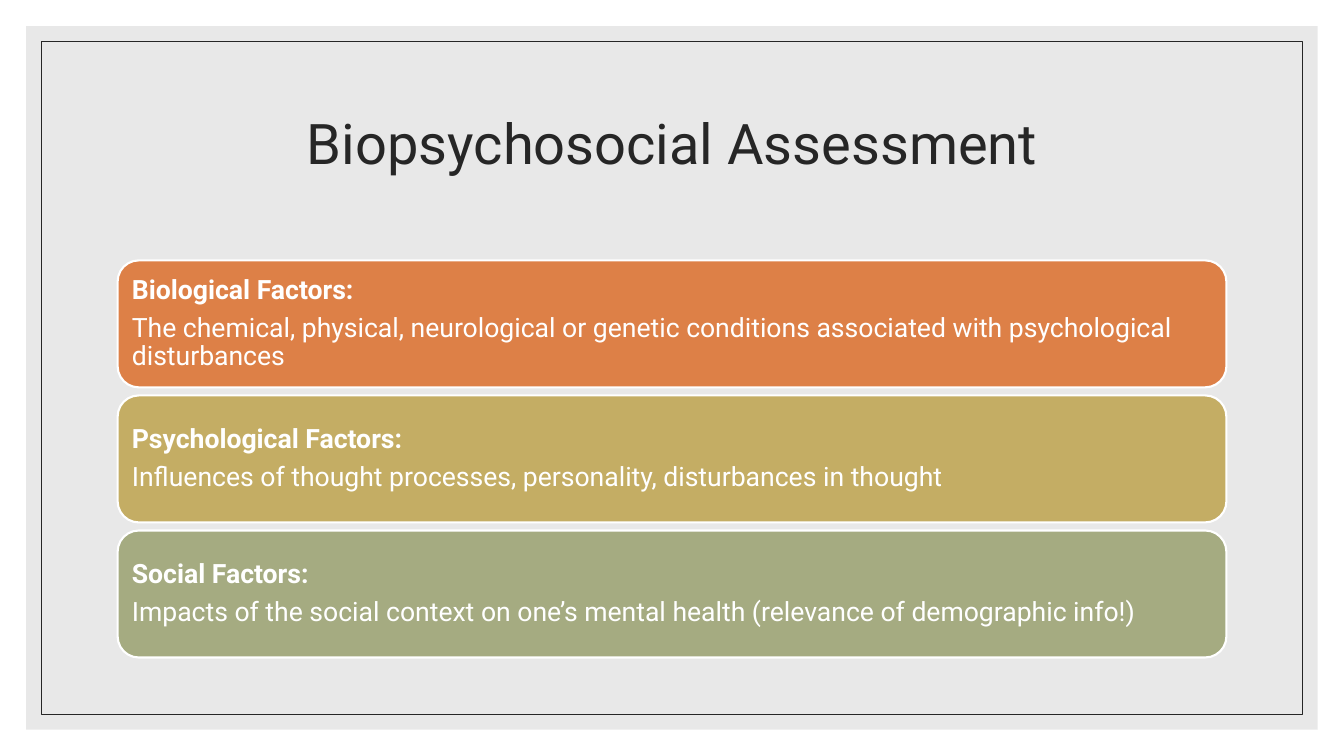
from dataclasses import dataclass

import lxml.etree
import pptx
import pptx.dml.color
import pptx.enum.shapes
import pptx.enum.text
import pptx.oxml.ns
import pptx.shapes.autoshape
import pptx.slide
import pptx.text.text
import pptx.util

COLUMNS, ROWS = 80, 45
SLIDE_WIDTH, SLIDE_HEIGHT = pptx.util.Inches(13.33), pptx.util.Inches(7.5)
FONT = "Roboto"
COLORS = {
    "white": "FFFFFF",
    "panel": "D9D9D9",
    "ink": "262626",
    "biological": "DD8047",
    "psychological": "C4AD64",
    "social": "A5AB81",
}


@dataclass
class Area:
    """A place on the slide grid, in columns and rows."""
    column: float
    row: float
    columns: float
    rows: float

    def lengths(self) -> tuple[int, int, int, int]:
        across, down = SLIDE_WIDTH / COLUMNS, SLIDE_HEIGHT / ROWS
        return (round(self.column * across), round(self.row * down),
                round(self.columns * across), round(self.rows * down))


@dataclass
class Factor:
    color: str
    heading: str
    description: str


FACTORS = [
    Factor("biological", "Biological Factors:",
           "The chemical, physical, neurological or genetic conditions "
           "associated with psychological disturbances"),
    Factor("psychological", "Psychological Factors:",
           "Influences of thought processes, personality, disturbances in thought"),
    Factor("social", "Social Factors:",
           "Impacts of the social context on one’s mental health "
           "(relevance of demographic info!)"),
]
TITLE = Area(7, 4.2, 66, 9)
FIRST_CARD_ROW, CARD_PITCH, CARD_ROWS = 15.5, 8.04, 7.56


def rgb(color: str) -> pptx.dml.color.RGBColor:
    return pptx.dml.color.RGBColor.from_string(COLORS[color])


def margin_area(margin: float) -> Area:
    return Area(margin, margin, COLUMNS - 2 * margin, ROWS - 2 * margin)


def add_block(slide: pptx.slide.Slide, area: Area, *, fill: str | None = None,
              opacity: int = 100, line: str | None = None, line_width: float = 0,
              rounded: bool = False) -> pptx.shapes.autoshape.Shape:
    kinds = pptx.enum.shapes.MSO_SHAPE
    block = slide.shapes.add_shape(
        kinds.ROUNDED_RECTANGLE if rounded else kinds.RECTANGLE, *area.lengths())
    block.shadow.inherit = False
    if fill:
        block.fill.solid()
        block.fill.fore_color.rgb = rgb(fill)
        if opacity < 100:
            tint = block.fill._xPr.find(".//" + pptx.oxml.ns.qn("a:srgbClr"))
            lxml.etree.SubElement(tint, pptx.oxml.ns.qn("a:alpha"),
                                  val=str(opacity * 1000))
    else:
        block.fill.background()
    if line:
        block.line.color.rgb = rgb(line)
        block.line.width = pptx.util.Pt(line_width)
    else:
        block.line.fill.background()
    return block


def write_text(frame: pptx.text.text.TextFrame, text: str, *, size: float, color: str,
               bold: bool = False, centered: bool = False,
               space_after: float = 0) -> None:
    """Add a paragraph, using the first one while it is still empty."""
    align = pptx.enum.text.PP_ALIGN
    frame.word_wrap = True
    frame.vertical_anchor = pptx.enum.text.MSO_ANCHOR.MIDDLE
    paragraph = frame.add_paragraph() if frame.text else frame.paragraphs[0]
    paragraph.alignment = align.CENTER if centered else align.LEFT
    paragraph.line_spacing = 0.9
    paragraph.space_after = pptx.util.Pt(space_after)
    run = paragraph.add_run()
    run.text = text
    run.font.name = FONT
    run.font.size = pptx.util.Pt(size)
    run.font.bold = bold
    run.font.color.rgb = rgb(color)


def add_factor_card(slide: pptx.slide.Slide, factor: Factor, area: Area) -> None:
    card = add_block(slide, area, fill=factor.color, line="white",
                     line_width=1.5, rounded=True)
    frame = card.text_frame
    inset = pptx.util.Inches(0.08)
    frame.margin_left = frame.margin_right = inset
    frame.margin_top = frame.margin_bottom = inset
    for text, bold in ((factor.heading, True), (factor.description, False)):
        write_text(frame, text, size=19, color="white", bold=bold, space_after=6.65)


def main() -> None:
    presentation = pptx.Presentation()
    presentation.slide_width, presentation.slide_height = SLIDE_WIDTH, SLIDE_HEIGHT
    slide = presentation.slides.add_slide(presentation.slide_layouts[6])

    add_block(slide, margin_area(0), fill="white")
    add_block(slide, margin_area(1.56), fill="panel", opacity=60)
    add_block(slide, margin_area(2.46), line="ink", line_width=0.5)

    title = slide.shapes.add_textbox(*TITLE.lengths())
    write_text(title.text_frame, "Biopsychosocial Assessment",
               size=40, color="ink", centered=True)

    for index, factor in enumerate(FACTORS):
        row = FIRST_CARD_ROW + index * CARD_PITCH
        add_factor_card(slide, factor,
                        Area(TITLE.column, row, TITLE.columns, CARD_ROWS))

    presentation.save("out.pptx")


if __name__ == "__main__":
    main()
